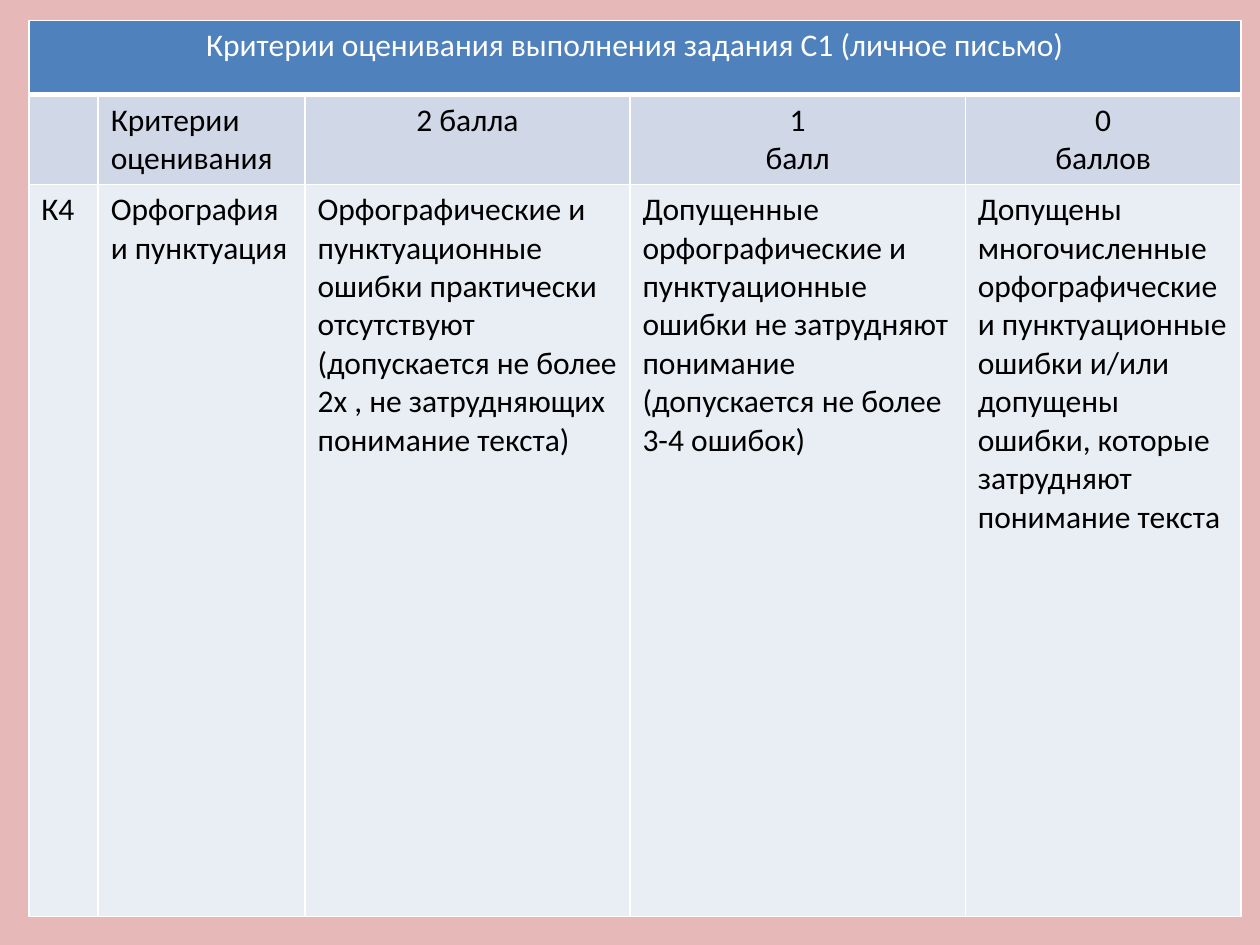
from lxml import etree
from pptx import Presentation
from pptx.dml.color import RGBColor
from pptx.enum.text import PP_ALIGN
from pptx.oxml.ns import qn
from pptx.util import Cm, Pt

LEFT, CENTER = PP_ALIGN.LEFT, PP_ALIGN.CENTER

TITLE = "Критерии оценивания выполнения задания С1 (личное письмо)"
HEADINGS = ["", "Критерии\nоценивания", "2 балла", "1\nбалл", "0\nбаллов"]
CRITERION = [
    "К4",
    "Орфография и пунктуация",
    "Орфографические и пунктуационные ошибки практически отсутствуют "
    "(допускается не более 2х , не затрудняющих понимание текста)",
    "Допущенные орфографические и пунктуационные ошибки не затрудняют понимание "
    "(допускается не более 3-4 ошибок)",
    "Допущены многочисленные орфографические и пунктуационные ошибки и/или "
    "допущены ошибки, которые затрудняют понимание текста",
]
COL_WIDTHS = [1.4, 4.17, 6.55, 6.76, 5.56]
ROWS = [
    dict(texts=[TITLE, "", "", "", ""], height=1.5, fill="4F81BD", color="FFFFFF",
         aligns=[CENTER] * 5, bottom=3),
    dict(texts=HEADINGS, height=1.3, fill="D0D8E8", color="000000",
         aligns=[LEFT, LEFT, CENTER, CENTER, CENTER], bottom=1),
    dict(texts=CRITERION, height=14.76, fill="E9EDF4", color="000000",
         aligns=[LEFT] * 5, bottom=1),
]


def paint(fill, color):
    fill.solid()
    fill.fore_color.rgb = RGBColor.from_string(color)


def set_borders(cell, bottom, color="FFFFFF"):
    tc_pr = cell._tc.get_or_add_tcPr()
    for side, width in (("L", 1), ("R", 1), ("T", 1), ("B", bottom)):
        ln = etree.SubElement(tc_pr, qn(f"a:ln{side}"), w=str(Pt(width)))
        solid = etree.SubElement(ln, qn("a:solidFill"))
        etree.SubElement(solid, qn("a:srgbClr"), val=color)


def write(cell, text, color="000000", align=LEFT, size=18, font="Calibri"):
    tf = cell.text_frame
    tf.text = text
    for p in tf.paragraphs:
        p.alignment = align
        p.font.size = Pt(size)
        for r in p.runs:
            r.font.size = Pt(size)
            r.font.name = font
            r.font.bold = False
            paint(r.font.fill, color)


def main():
    """Build the slide with the grading criteria table."""
    prs = Presentation()
    prs.slide_width, prs.slide_height = Cm(25.4), Cm(19.05)
    s = prs.slides.add_slide(prs.slide_layouts[6])
    paint(s.background.fill, "E6B9B8")

    width, height = sum(COL_WIDTHS), sum(row["height"] for row in ROWS)
    table = s.shapes.add_table(len(ROWS), len(COL_WIDTHS), Cm(0.58), Cm(0.41),
                               Cm(width), Cm(height)).table
    for col, col_width in zip(table.columns, COL_WIDTHS):
        col.width = Cm(col_width)
    for i, row in enumerate(ROWS):
        table.rows[i].height = Cm(row["height"])
        for j, (text, align) in enumerate(zip(row["texts"], row["aligns"])):
            cell = table.cell(i, j)
            set_borders(cell, row["bottom"])
            paint(cell.fill, row["fill"])
            write(cell, text, color=row["color"], align=align)
    table.cell(0, 0).merge(table.cell(0, len(COL_WIDTHS) - 1))
    prs.save("out.pptx")


if __name__ == "__main__":
    main()
